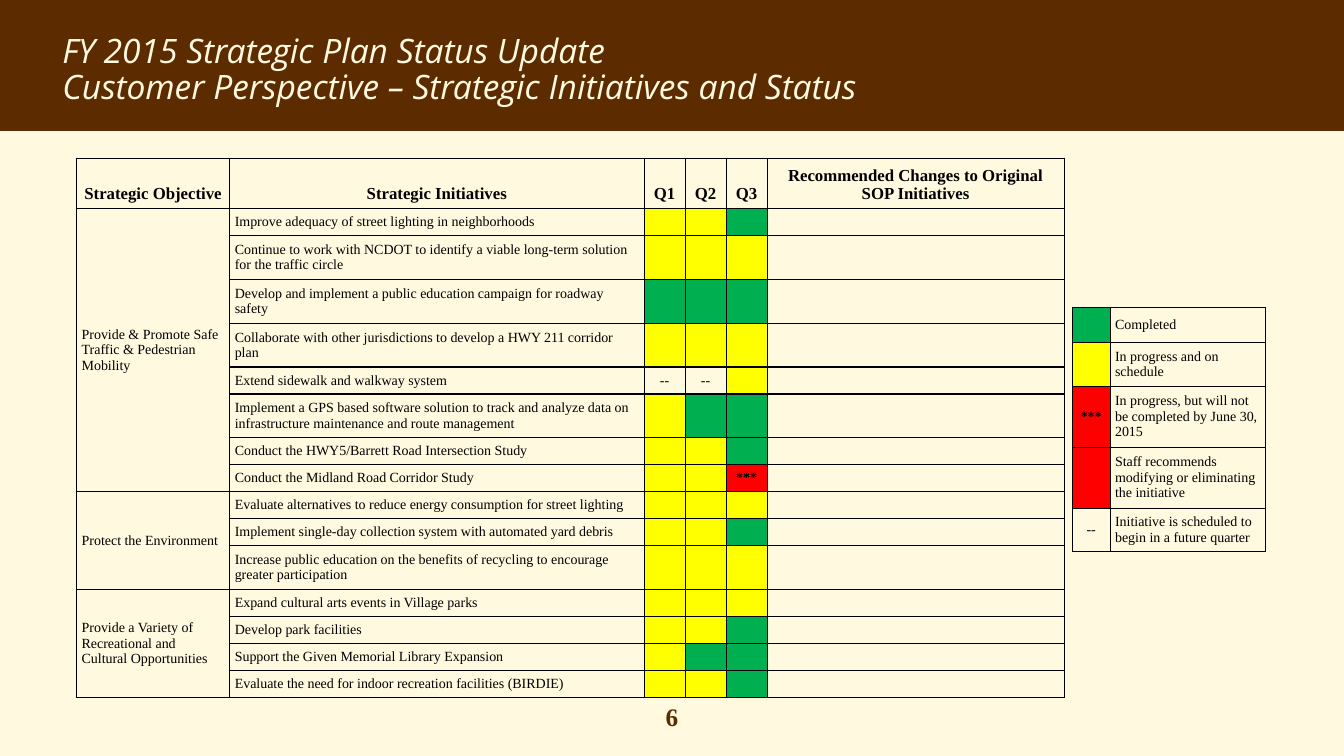
from lxml import etree
from pptx import Presentation
from pptx.dml.color import RGBColor
from pptx.enum.shapes import MSO_SHAPE
from pptx.enum.text import MSO_ANCHOR, PP_ALIGN
from pptx.oxml.ns import qn
from pptx.util import Pt

LEFT, CENTER = PP_ALIGN.LEFT, PP_ALIGN.CENTER
MIDDLE, BOTTOM = MSO_ANCHOR.MIDDLE, MSO_ANCHOR.BOTTOM
BROWN = RGBColor(0x5D, 0x2B, 0x00)
CREAM = RGBColor(0xFF, 0xF9, 0xDF)
BLACK = RGBColor(0, 0, 0)
GREEN = RGBColor(0x00, 0xB0, 0x50)
YELLOW = RGBColor(0xFF, 0xFF, 0x00)
RED = RGBColor(0xFF, 0x00, 0x00)
SERIF, SANS = "Times New Roman", "Open Sans"

# Content
TITLE = ("FY 2015 Strategic Plan Status Update",
         "Customer Perspective – Strategic Initiatives and Status")
PAGE = "6"
HEADINGS = ("Strategic Objective", "Strategic Initiatives", "Q1", "Q2", "Q3",
            "Recommended Changes to Original SOP Initiatives")
# Status codes: text and fill of a status cell
STATUS = {"G": ("", GREEN), "Y": ("", YELLOW), "*": ("***", RED),
          "R": ("", RED), "-": ("--", None)}
# Objective -> (initiative, status in Q1 to Q3, text lines)
OBJECTIVES = {
    "Provide & Promote Safe Traffic & Pedestrian Mobility": [
        ("Improve adequacy of street lighting in neighborhoods", "YYG", 1),
        ("Continue to work with NCDOT to identify a viable long-term solution "
         "for the traffic circle", "YYY", 2),
        ("Develop and implement a public education campaign for roadway safety", "GGG", 2),
        ("Collaborate with other jurisdictions to develop a HWY 211 corridor plan", "YYY", 2),
        ("Extend sidewalk and walkway system", "--Y", 1),
        ("Implement a GPS based software solution to track and analyze data on "
         "infrastructure maintenance and route management", "YGG", 2),
        ("Conduct the HWY5/Barrett Road Intersection Study", "YYG", 1),
        ("Conduct the Midland Road Corridor Study", "YY*", 1),
    ],
    "Protect the Environment": [
        ("Evaluate alternatives to reduce energy consumption for street lighting", "YYY", 1),
        ("Implement single-day collection system with automated yard debris", "YYG", 1),
        ("Increase public education on the benefits of recycling to encourage "
         "greater participation", "YYY", 2),
    ],
    "Provide a Variety of Recreational and Cultural Opportunities": [
        ("Expand cultural arts events in Village parks", "YYY", 1),
        ("Develop park facilities", "YYG", 1),
        ("Support the Given Memorial Library Expansion", "YGG", 1),
        ("Evaluate the need for indoor recreation facilities (BIRDIE)", "YYG", 1),
    ],
}
# Status code, meaning, row height
LEGEND = [
    ("G", "Completed", 25.4),
    ("Y", "In progress and on schedule", 30.9),
    ("*", "In progress, but will not be completed by June 30, 2015", 43.4),
    ("R", "Staff recommends modifying or eliminating the initiative", 43.4),
    ("-", "Initiative is scheduled to begin in a future quarter", 30.9),
]

# Layout in points
PLAN_AT, PLAN_COLS = (54.7, 113), (109.4, 296, 29.3, 29.3, 29.3, 212.2)
LEGEND_AT, LEGEND_COLS = (766, 219.3), (26.9, 110.9)
HEADING_HEIGHT = 36
LINE_HEIGHTS = {1: 19.3, 2: 31.1}
CELL_INSET = 3.6


def format_runs(paragraph, font_name, size, color, bold=False, italic=False):
    for run in paragraph.runs:
        font = run.font
        font.name, font.size, font.bold, font.italic = font_name, Pt(size), bold, italic
        font.color.rgb = color


def add_grid(slide, at, columns, heights):
    frame = slide.shapes.add_table(len(heights), len(columns), Pt(at[0]), Pt(at[1]),
                                   Pt(sum(columns)), Pt(sum(heights)))
    grid = frame.table
    grid.first_row = grid.horz_banding = False
    for column, width in zip(grid.columns, columns):
        column.width = Pt(width)
    for row, height in zip(grid.rows, heights):
        row.height = Pt(height)
    return grid


def fill_cell(cell, text="", fill=None, size=10, bold=False, align=LEFT, anchor=MIDDLE):
    cell.margin_left = cell.margin_right = Pt(CELL_INSET)
    cell.margin_top = cell.margin_bottom = Pt(CELL_INSET)
    cell.vertical_anchor = anchor
    if fill is None:
        cell.fill.background()
    else:
        cell.fill.solid()
        cell.fill.fore_color.rgb = fill
    cell.text_frame.text = text
    paragraph = cell.text_frame.paragraphs[0]
    paragraph.alignment = align
    format_runs(paragraph, SERIF, size, BLACK, bold)
    if not text:  # keeps the empty line from stretching its row
        etree.SubElement(paragraph._p, qn("a:endParaRPr")).set("sz", str(size * 100))


def fill_status(cell, code):
    text, fill = STATUS[code]
    fill_cell(cell, text, fill, bold=code == "*", align=CENTER)


def draw_borders(grid, width):
    for cell in grid.iter_cells():
        properties = cell._tc.get_or_add_tcPr()
        for index, side in enumerate(("lnL", "lnR", "lnT", "lnB")):
            line = etree.Element(qn("a:" + side), w=str(Pt(width)))
            solid = etree.SubElement(line, qn("a:solidFill"))
            etree.SubElement(solid, qn("a:srgbClr")).set("val", str(BLACK))
            properties.insert(index, line)


def add_text(slide, box, lines, align, **style):
    frame = slide.shapes.add_textbox(*map(Pt, box)).text_frame
    frame.word_wrap = True
    frame.vertical_anchor = MIDDLE
    frame.text = "\n".join(lines)
    for paragraph in frame.paragraphs:
        paragraph.alignment = align
        format_runs(paragraph, **style)
    return frame


def add_plan(slide):
    initiatives = [item for group in OBJECTIVES.values() for item in group]
    heights = [HEADING_HEIGHT] + [LINE_HEIGHTS[lines] for _, _, lines in initiatives]
    plan = add_grid(slide, PLAN_AT, PLAN_COLS, heights)
    for column, heading in enumerate(HEADINGS):
        fill_cell(plan.cell(0, column), heading, size=12, bold=True,
                  align=CENTER, anchor=BOTTOM)
    for row, (initiative, quarters, _) in enumerate(initiatives, 1):
        fill_cell(plan.cell(row, 0))
        fill_cell(plan.cell(row, 1), initiative)
        for column, code in enumerate(quarters, 2):
            fill_status(plan.cell(row, column), code)
        fill_cell(plan.cell(row, 5))
    top = 1
    for objective, group in OBJECTIVES.items():
        plan.cell(top, 0).merge(plan.cell(top + len(group) - 1, 0))
        fill_cell(plan.cell(top, 0), objective)
        top += len(group)
    draw_borders(plan, 1)


def add_legend(slide):
    legend = add_grid(slide, LEGEND_AT, LEGEND_COLS, [height for _, _, height in LEGEND])
    for row, (code, meaning, _) in enumerate(LEGEND):
        fill_status(legend.cell(row, 0), code)
        fill_cell(legend.cell(row, 1), meaning)
    draw_borders(legend, 0.5)


def main():
    deck = Presentation()
    deck.slide_width, deck.slide_height = Pt(960), Pt(540)
    slide = deck.slides.add_slide(deck.slide_layouts[6])
    slide.background.fill.solid()
    slide.background.fill.fore_color.rgb = CREAM

    # Title band
    band = slide.shapes.add_shape(MSO_SHAPE.RECTANGLE, 0, 0, deck.slide_width, Pt(93.6))
    band.shadow.inherit = False
    band.fill.solid()
    band.fill.fore_color.rgb = BROWN
    band.line.fill.background()
    title = add_text(slide, (37.4, 18, 885, 65.5), TITLE, LEFT,
                     font_name=SANS, size=24, color=CREAM, italic=True)
    for paragraph in title.paragraphs:
        paragraph.line_spacing = 0.88

    # Tables and page number
    add_plan(slide)
    add_legend(slide)
    add_text(slide, (444, 497.5, 72, 28.8), [PAGE], CENTER,
             font_name=SERIF, size=18, color=BROWN, bold=True)
    deck.save("out.pptx")


if __name__ == "__main__":
    main()
